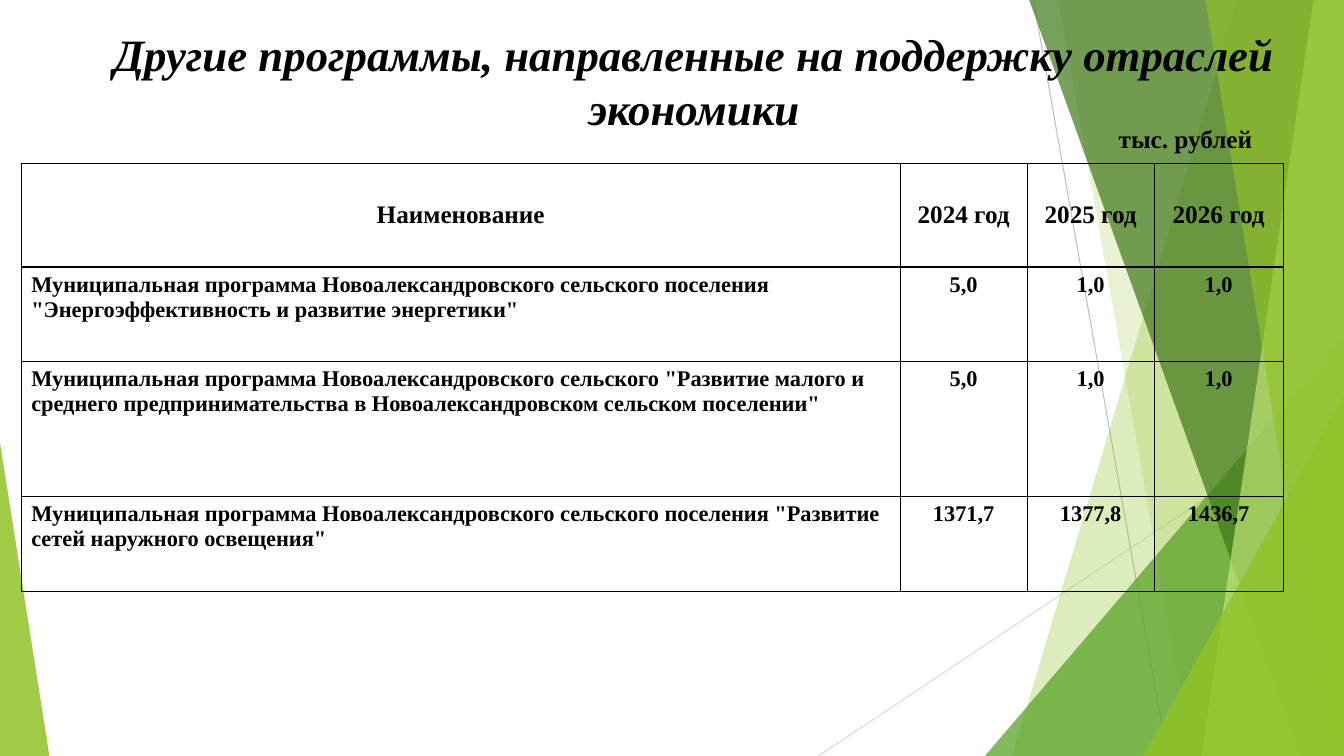
from lxml import etree
from pptx import Presentation, util as u
from pptx.dml.color import RGBColor
from pptx.enum import shapes, text
from pptx.oxml import parse_xml
from pptx.oxml.ns import nsdecls, qn

W, H = u.Inches(13.333), u.Inches(7.5)
FONT = "Times New Roman"
COLORS = {
    "ink": "000000", "lime": "90C226", "green": "54A021", "forest": "3F7819",
    "pale": "C0E474", "grey": "BFBFBF", "silver": "D9D9D9",
}
CENTER, LEFT = text.PP_ALIGN.CENTER, text.PP_ALIGN.LEFT

# Decoration from back to front; places are percentages of the slide
LINES = [((76.9, 0), (86.85, 100), "grey"), ((100, 53.73), (60.9, 100), "silver")]
BACK_BANDS = [(92.1, 75.3, "lime", 30), (78.75, 88.73, "lime", 20)]
FRONT_BANDS = [(76.58, 96.83, "forest", 70), (97.73, 89.4, "pale", 70),
               (89.7, 98.85, "lime", 65)]
BACK_CORNER = (73.28, 44.4, 26.72, 1, "green", 72)
FRONT_CORNERS = [(85.05, 52.4, 14.95, 1, "lime", 80), (0, 58.53, 3.68, 0, "lime", 85)]

COLUMNS = [65.4, 9.45, 9.45, 9.6]
ROWS = [13.73, 12.53, 17.87, 12.53]
PROGRAMS = [
    ["Наименование", "2024 год", "2025 год", "2026 год"],
    ['Муниципальная программа Новоалександровского сельского поселения '
     '"Энергоэффективность и развитие энергетики"', "5,0", "1,0", "1,0"],
    ['Муниципальная программа Новоалександровского сельского "Развитие малого и '
     'среднего предпринимательства в Новоалександровском сельском поселении"',
     "5,0", "1,0", "1,0"],
    ['Муниципальная программа Новоалександровского сельского поселения '
     '"Развитие сетей наружного освещения"', "1371,7", "1377,8", "1436,7"],
]


def x(percent):
    return u.Emu(round(W * percent / 100))


def y(percent):
    return u.Emu(round(H * percent / 100))


def rgb(name):
    return RGBColor.from_string(COLORS[name])


def paint(sp, color, opacity):
    sp.shadow.inherit = False
    sp.line.fill.background()
    sp.fill.solid()
    sp.fill.fore_color.rgb = rgb(color)
    clr = sp._element.spPr.find(f"{qn('a:solidFill')}/{qn('a:srgbClr')}")
    etree.SubElement(clr, qn("a:alpha"), val=str(opacity * 1000))


def add_line(s, start, end, color):
    line = s.shapes.add_connector(shapes.MSO_CONNECTOR.STRAIGHT,
                                  x(start[0]), y(start[1]), x(end[0]), y(end[1]))
    line.line.color.rgb = rgb(color)
    line.line.width = u.Pt(0.75)
    etree.SubElement(line._element.spPr, qn("a:effectLst"))


def add_band(s, top, bottom, color, opacity):
    """Full-height band whose slanted left edge runs from top to bottom."""
    builder = s.shapes.build_freeform(x(top), 0)
    builder.add_line_segments([(W, 0), (W, H), (x(bottom), H)], close=True)
    paint(builder.convert_to_shape(), color, opacity)


def add_corner(s, left, top, width, apex, color, opacity):
    """Triangle standing on the bottom edge of the slide."""
    sp = s.shapes.add_shape(shapes.MSO_SHAPE.ISOSCELES_TRIANGLE,
                            x(left), y(top), x(width), y(100 - top))
    sp.adjustments[0] = apex
    paint(sp, color, opacity)


def write(tf, words, size, align=LEFT, italic=False):
    tf.word_wrap = True
    p = tf.paragraphs[0]
    p.text = words
    p.alignment = align
    f = p.font
    f.name, f.size, f.bold, f.italic = FONT, u.Pt(size), True, italic
    f.color.rgb = rgb("ink")
    return p


def add_title(s, words):
    sp = s.shapes.title
    s.shapes._spTree.append(sp._element)  # in front of the decoration
    sp.left, sp.top, sp.width, sp.height = x(7.8), y(3.87), x(87.68), y(13.6)
    tf = sp.text_frame
    tf.auto_size = text.MSO_AUTO_SIZE.NONE
    tf.vertical_anchor = text.MSO_ANCHOR.MIDDLE
    tf.margin_left = tf.margin_right = tf.margin_top = tf.margin_bottom = 0
    p = write(tf, words, 32, CENTER, italic=True)
    p.runs[0].font._element.append(parse_xml(
        f'<a:effectLst {nsdecls("a")}><a:outerShdw blurRad="38100" dist="38100" '
        f'dir="2700000"><a:srgbClr val="{COLORS["ink"]}"><a:alpha val="43000"/>'
        '</a:srgbClr></a:outerShdw></a:effectLst>'))


def add_borders(cell):
    tcPr = cell._tc.get_or_add_tcPr()
    for i, side in enumerate("LRTB"):
        tcPr.insert(i, parse_xml(
            f'<a:ln{side} {nsdecls("a")} w="12700"><a:solidFill>'
            f'<a:srgbClr val="{COLORS["ink"]}"/></a:solidFill></a:ln{side}>'))


def add_program_table(s):
    table = s.shapes.add_table(len(ROWS), len(COLUMNS), x(1.58), y(21.6),
                               x(sum(COLUMNS)), y(sum(ROWS))).table
    table.first_row = table.horz_banding = False
    for column, width in zip(table.columns, COLUMNS):
        column.width = x(width)
    for r, (row, height) in enumerate(zip(table.rows, ROWS)):
        row.height = y(height)
        for c, cell in enumerate(row.cells):
            header = r == 0
            write(cell.text_frame, PROGRAMS[r][c], 18 if header else 16,
                  CENTER if header or c else LEFT)
            cell.vertical_anchor = (text.MSO_ANCHOR.MIDDLE if header
                                    else text.MSO_ANCHOR.TOP)
            cell.fill.background()
            add_borders(cell)


def add_decoration(s):
    for line in LINES:
        add_line(s, *line)
    for band in BACK_BANDS:
        add_band(s, *band)
    add_corner(s, *BACK_CORNER)
    for band in FRONT_BANDS:
        add_band(s, *band)
    for corner in FRONT_CORNERS:
        add_corner(s, *corner)


def main():
    prs = Presentation()
    prs.slide_width, prs.slide_height = W, H
    s = prs.slides.add_slide(prs.slide_layouts[5])
    add_decoration(s)
    add_title(s, "Другие программы, направленные на поддержку отраслей экономики")
    add_program_table(s)
    # Unit of measure
    note = s.shapes.add_textbox(x(82.5), y(15.6), x(14.93), y(5.33))
    write(note.text_frame, "тыс. рублей", 18)
    prs.save("out.pptx")


if __name__ == "__main__":
    main()
